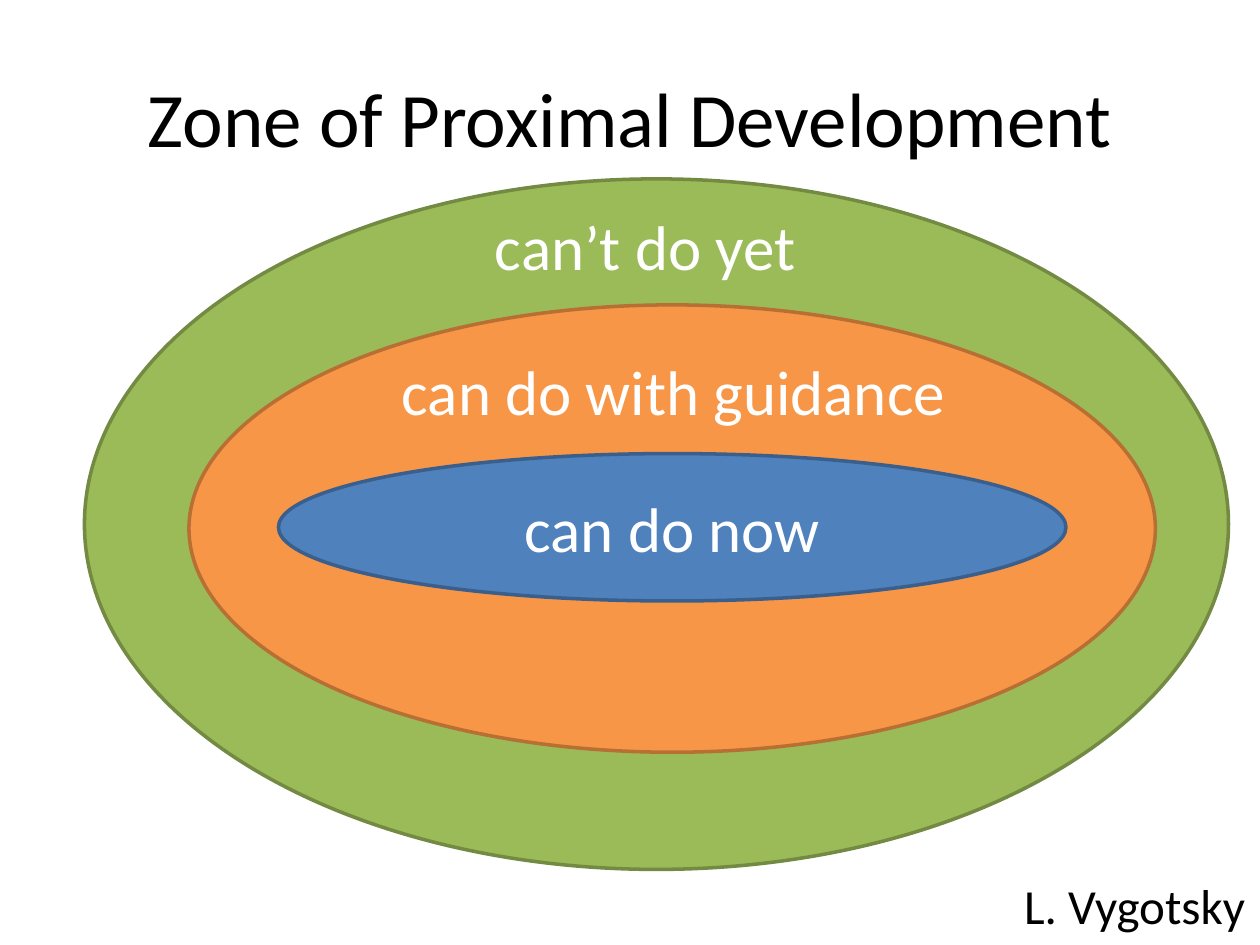
from pptx import Presentation
from pptx.dml.color import RGBColor
from pptx.enum.shapes import MSO_SHAPE
from pptx.enum.text import MSO_ANCHOR, PP_ALIGN
from pptx.util import Inches, Pt

OVAL = MSO_SHAPE.OVAL
TOP, MIDDLE = MSO_ANCHOR.TOP, MSO_ANCHOR.MIDDLE
LEFT, CENTER = PP_ALIGN.LEFT, PP_ALIGN.CENTER
WHITE, BLACK = "FFFFFF", "000000"

# Zones from outside in: box, fill, line
ZONES = [
    ((0.67, 1.42, 9.08, 5.48), "9BBB59", "738A42"),
    ((1.5, 2.42, 7.67, 3.55), "F79646", "B76F34"),
    ((2.21, 3.6, 6.25, 1.17), "4F81BD", "3A5F8C"),
]


def color(code):
    return RGBColor.from_string(code)


def write(shape, text, size, ink, align=LEFT, anchor=TOP, wrap=True):
    frame = shape.text_frame
    frame.word_wrap = wrap
    frame.vertical_anchor = anchor
    para = frame.paragraphs[0]
    para.alignment = align
    run = para.add_run()
    run.text = text
    run.font.name = "Calibri"
    run.font.size = Pt(size)
    run.font.color.rgb = color(ink)


def label(slide, box, text, size, ink, **style):
    shape = slide.shapes.add_textbox(*map(Inches, box))
    write(shape, text, size, ink, **style)


def zone(slide, box, fill, line):
    shape = slide.shapes.add_shape(OVAL, *map(Inches, box))
    shape.shadow.inherit = False
    shape.fill.solid()
    shape.fill.fore_color.rgb = color(fill)
    shape.line.color.rgb = color(line)
    shape.line.width = Pt(2)
    return shape


def diagram(slide):
    # Nested ovals; the last one is the core
    for parts in ZONES:
        core = zone(slide, *parts)
    write(core, "can do now", 36, WHITE, align=CENTER, anchor=MIDDLE)

    # Labels of the outer zones
    label(slide, (3.09, 2.75, 4.58, 0.71), "can do with guidance", 36, WHITE)
    label(slide, (3.83, 1.6, 2.67, 0.71), "can’t do yet", 36, WHITE)


def main():
    deck = Presentation()
    deck.slide_width, deck.slide_height = Inches(10), Inches(7.5)
    slide = deck.slides.add_slide(deck.slide_layouts[6])

    # Title, diagram, author
    label(slide, (0.5, 0.3, 9, 1.25), "Zone of Proximal Development", 44,
          BLACK, align=CENTER, anchor=MIDDLE)
    diagram(slide)
    label(slide, (8.03, 6.9, 1.97, 0.57), "L. Vygotsky", 28, BLACK, wrap=False)
    deck.save("out.pptx")


if __name__ == "__main__":
    main()
